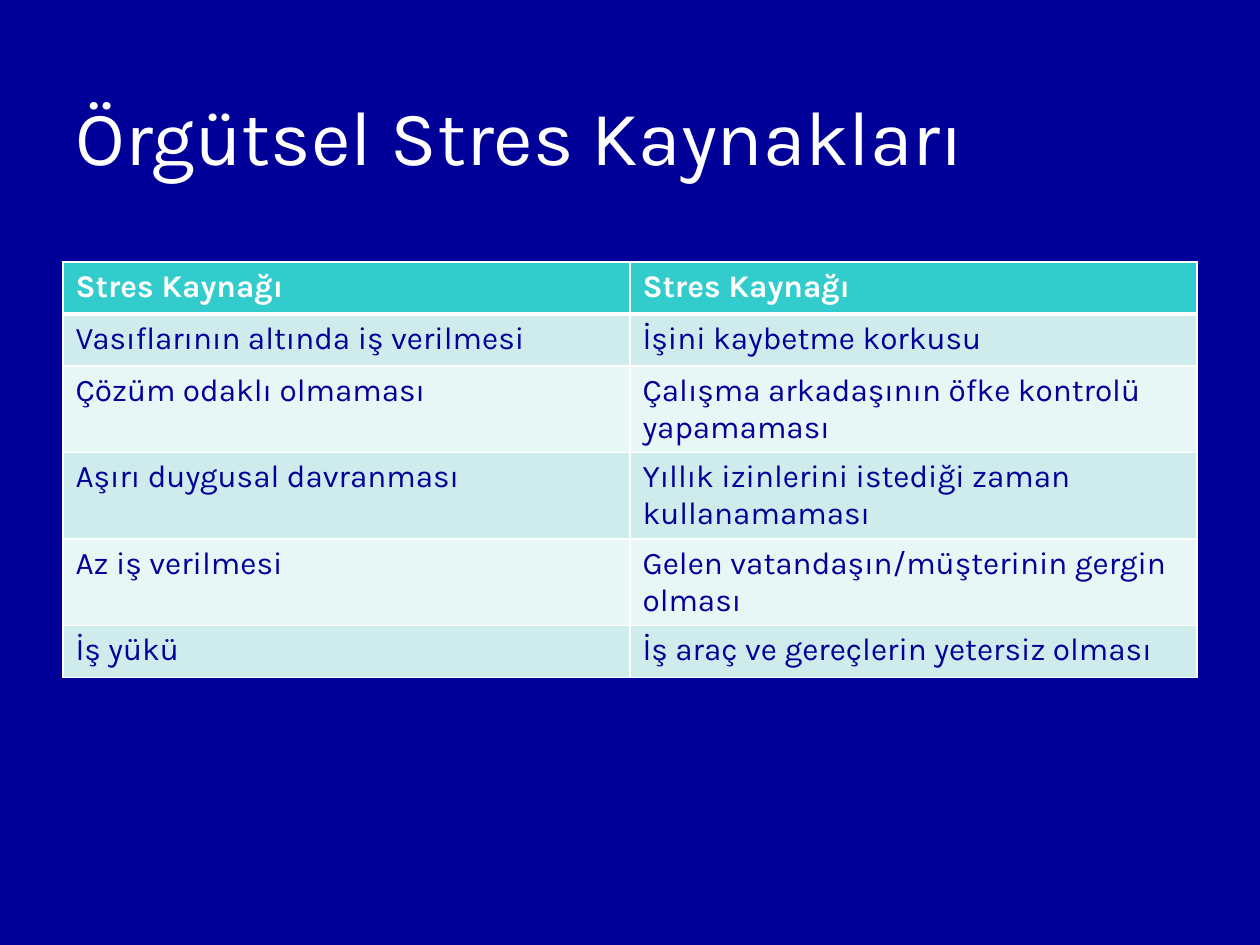
from pptx import Presentation
from pptx.dml.color import RGBColor
from pptx.enum.text import MSO_ANCHOR, PP_ALIGN
from pptx.oxml import parse_xml
from pptx.oxml.ns import nsdecls
from pptx.util import Pt

PX = 914400 // 126
FONT = "Karla"
COLORS = {
    "background": "000099",
    "white": "FFFFFF",
    "header": "33CCCC",
    "text": "010199",
    "odd": "CEECEC",
    "even": "E8F6F6",
}
ROWS = [
    ("Stres Kaynağı", "Stres Kaynağı"),
    ("Vasıflarının altında iş verilmesi", "İşini kaybetme korkusu"),
    ("Çözüm odaklı olmaması", "Çalışma arkadaşının öfke kontrolü yapamaması"),
    ("Aşırı duygusal davranması", "Yıllık izinlerini istediği zaman kullanamaması"),
    ("Az iş verilmesi", "Gelen vatandaşın/müşterinin gergin olması"),
    ("İş yükü", "İş araç ve gereçlerin yetersiz olması"),
]
LEFT, WIDTH, ROW_HEIGHT = 63, 1134, 52


def format_text(frame, size, color, bold=False):
    for para in frame.paragraphs:
        para.alignment = PP_ALIGN.LEFT
        for span in para.runs:
            span.font.name = FONT
            span.font.size = Pt(size)
            span.font.bold = bold
            span.font.color.rgb = RGBColor.from_string(COLORS[color])


def add_border(cell, side, points):
    """Draw one white cell edge; side is L, R, T or B."""
    cell._tc.get_or_add_tcPr().append(parse_xml(
        f'<a:ln{side} {nsdecls("a")} w="{Pt(points)}"><a:solidFill>'
        f'<a:srgbClr val="{COLORS["white"]}"/></a:solidFill></a:ln{side}>'))


deck = Presentation()
deck.slide_width, deck.slide_height = 1260 * PX, 945 * PX
page = deck.slides.add_slide(deck.slide_layouts[5])
page.background.fill.solid()
page.background.fill.fore_color.rgb = RGBColor.from_string(COLORS["background"])

title = page.shapes.title
title.left, title.top = LEFT * PX, 40 * PX
title.width, title.height = WIDTH * PX, 190 * PX
title.text_frame.text = "Örgütsel Stres Kaynakları"
title.text_frame.vertical_anchor = MSO_ANCHOR.MIDDLE
format_text(title.text_frame, 44, "white")

table = page.shapes.add_table(
    len(ROWS), 2, LEFT * PX, 262 * PX, WIDTH * PX, len(ROWS) * ROW_HEIGHT * PX).table
for row, texts in enumerate(ROWS):
    is_header = row == 0
    fill = "header" if is_header else "odd" if row % 2 else "even"
    for column, text in enumerate(texts):
        cell = table.cell(row, column)
        cell.text_frame.text = text
        format_text(cell.text_frame, 18, "white" if is_header else "text", is_header)
        for side in "LRTB":
            heavy = (row, side) in ((0, "B"), (1, "T"))
            add_border(cell, side, 3 if heavy else 1)
        cell.fill.solid()
        cell.fill.fore_color.rgb = RGBColor.from_string(COLORS[fill])

deck.save("out.pptx")
